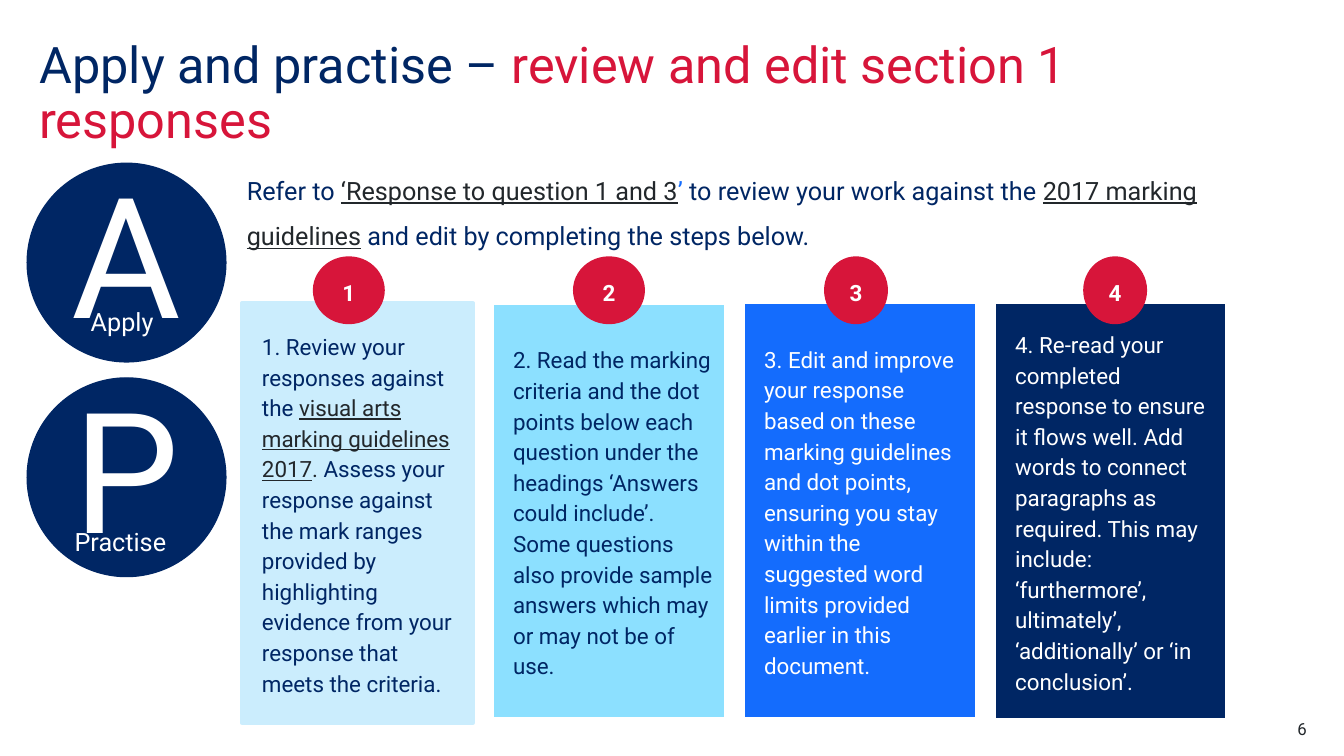
from dataclasses import dataclass
from typing import Optional

from pptx import Presentation
from pptx import util as u
from pptx.dml.color import RGBColor
from pptx.enum import shapes, text

NAVY = RGBColor(0x00, 0x26, 0x64)
RED = RGBColor(0xD7, 0x15, 0x3A)
BLUE = RGBColor(0x14, 0x6C, 0xFD)
SKY = RGBColor(0x8C, 0xE0, 0xFF)
PALE = RGBColor(0xCB, 0xED, 0xFD)
INK = RGBColor(0x22, 0x27, 0x2B)
WHITE = RGBColor(0xFF, 0xFF, 0xFF)

FONT = "Roboto"
COLS, ROWS = 133.3, 75
CARD_LEFT, CARD_PITCH = 24, 24.9
BADGE_TOP, BADGE_HEIGHT = 25.5, 6.6
DISC_LEFT, DISC_SIZE = 2.7, 19.7

prs = Presentation()
prs.slide_width, prs.slide_height = u.Inches(13.33), u.Inches(7.5)
s = prs.slides.add_slide(prs.slide_layouts[6])


@dataclass
class Box:
    left: float
    top: float
    width: float
    height: float

    def emu(self) -> tuple:
        col, row = prs.slide_width / COLS, prs.slide_height / ROWS
        return (int(self.left * col), int(self.top * row),
                int(self.width * col), int(self.height * row))


@dataclass
class Span:
    words: str
    color: RGBColor
    underline: Optional[bool] = None


@dataclass
class Disc:
    top: float
    letter: str
    label: str
    label_left: float
    label_top: float


@dataclass
class Card:
    top: float
    width: float
    height: float
    fill: RGBColor
    line: RGBColor
    line_width: float
    badge_left: float
    badge_width: float
    spans: list


def write(sp, spans: list, size: float, align=text.PP_ALIGN.LEFT,
          spacing: float = 1.0, bold: Optional[bool] = None):
    tf = sp.text_frame
    tf.word_wrap = True
    p = tf.paragraphs[0]
    p.alignment, p.line_spacing = align, spacing
    for span in spans:
        r = p.add_run()
        r.text = span.words
        f = r.font
        f.name, f.size, f.bold = FONT, u.Pt(size), bold
        f.underline = span.underline
        f.color.rgb = span.color
    return p


def add_text(box: Box, spans: list, size: float, inset: bool = False,
             anchor=text.MSO_ANCHOR.TOP, **style) -> None:
    sp = s.shapes.add_textbox(*box.emu())
    tf = sp.text_frame
    tf.vertical_anchor = anchor
    if not inset:
        tf.margin_left = tf.margin_right = tf.margin_top = tf.margin_bottom = 0
    write(sp, spans, size, **style)


def add_block(kind, box: Box, fill: RGBColor, line: RGBColor, line_width: float = 1):
    sp = s.shapes.add_shape(kind, *box.emu())
    sp.shadow.inherit = False
    sp.fill.solid()
    sp.fill.fore_color.rgb = fill
    sp.line.color.rgb = line
    sp.line.width = u.Pt(line_width)
    sp.text_frame.vertical_anchor = text.MSO_ANCHOR.MIDDLE
    return sp


def add_disc(disc: Disc) -> None:
    sp = add_block(shapes.MSO_SHAPE.OVAL,
                   Box(DISC_LEFT, disc.top, DISC_SIZE, DISC_SIZE), NAVY, NAVY)
    sp.text_frame.margin_top, sp.text_frame.margin_bottom = 0, u.Inches(0.22)
    write(sp, [Span(disc.letter, WHITE)], 120, text.PP_ALIGN.CENTER)
    add_text(Box(disc.label_left, disc.label_top, 10.3, 4.8),
             [Span(disc.label, WHITE)], 18)


def add_card(index: int, card: Card) -> None:
    left = CARD_LEFT + index * CARD_PITCH
    sp = add_block(shapes.MSO_SHAPE.RECTANGLE,
                   Box(left, card.top, card.width, card.height),
                   card.fill, card.line, card.line_width)
    p = write(sp, card.spans, 16, spacing=1.14)
    pPr = p._p.get_or_add_pPr()
    pPr.set("marL", str(u.Inches(0.1)))
    pPr.set("indent", "0")
    badge = add_block(shapes.MSO_SHAPE.OVAL,
                      Box(card.badge_left, BADGE_TOP, card.badge_width, BADGE_HEIGHT),
                      RED, RED)
    write(badge, [Span(str(index + 1), WHITE)], 16, text.PP_ALIGN.CENTER, 1.14, True)


DISCS = [
    Disc(16.2, "A", "Apply", 9, 30.4),
    Disc(37.5, "P", "Practise", 7.4, 52.2),
]

CARDS = [
    Card(30.1, 22.9, 41.6, PALE, PALE, 3, 31.1, 7, [
        Span("1. Review your responses against the ", NAVY),
        Span("visual arts marking guidelines 2017", INK, True),
        Span(". ", INK),
        Span("Assess your response against the mark ranges provided by highlighting "
             "evidence from your response that meets the criteria.", NAVY)]),
    Card(30.2, 23, 41, SKY, WHITE, 1, 56.9, 7, [
        Span("2. Read the marking criteria and the dot points below each question under "
             "the headings ‘Answers could include’. Some questions also provide sample "
             "answers which may or may not be of use.", NAVY)]),
    Card(30.1, 23, 41.1, BLUE, WHITE, 1, 81.8, 6.2, [
        Span("3. Edit and improve your response based on these marking guidelines and "
             "dot points, ensuring you stay within the suggested word limits provided "
             "earlier in this document.", WHITE)]),
    Card(30.1, 22.9, 41.2, NAVY, WHITE, 1, 107.5, 6.2, [
        Span("4. Re-read your completed response to ensure it flows well. Add words to "
             "connect paragraphs as required. This may include: ‘furthermore’, "
             "ultimately’, ‘additionally’ or ‘in conclusion’.", WHITE)]),
]

INTRO = [
    Span("Refer to ", NAVY),
    Span("‘Response to question 1 and 3", INK, True),
    Span("’ ", BLUE),
    Span("to review your work against the ", NAVY),
    Span("2017 marking guidelines", INK, True),
    Span(" and edit by completing the steps below.", NAVY),
]


def main() -> None:
    add_text(Box(3.9, 3.9, 110.2, 11),
             [Span("Apply and practise – ", NAVY),
              Span("review and edit section 1 responses", RED)],
             36, anchor=text.MSO_ANCHOR.MIDDLE, spacing=0.9)
    for disc in DISCS:
        add_disc(disc)
    add_text(Box(23.5, 15.4, 106.7, 9.5), INTRO, 18, inset=True, spacing=1.5)
    for index, card in enumerate(CARDS):
        add_card(index, card)
    add_text(Box(121.7, 71.3, 7.9, 2), [Span("6", INK)], 12,
             anchor=text.MSO_ANCHOR.MIDDLE, align=text.PP_ALIGN.RIGHT)
    prs.save("out.pptx")


if __name__ == "__main__":
    main()
